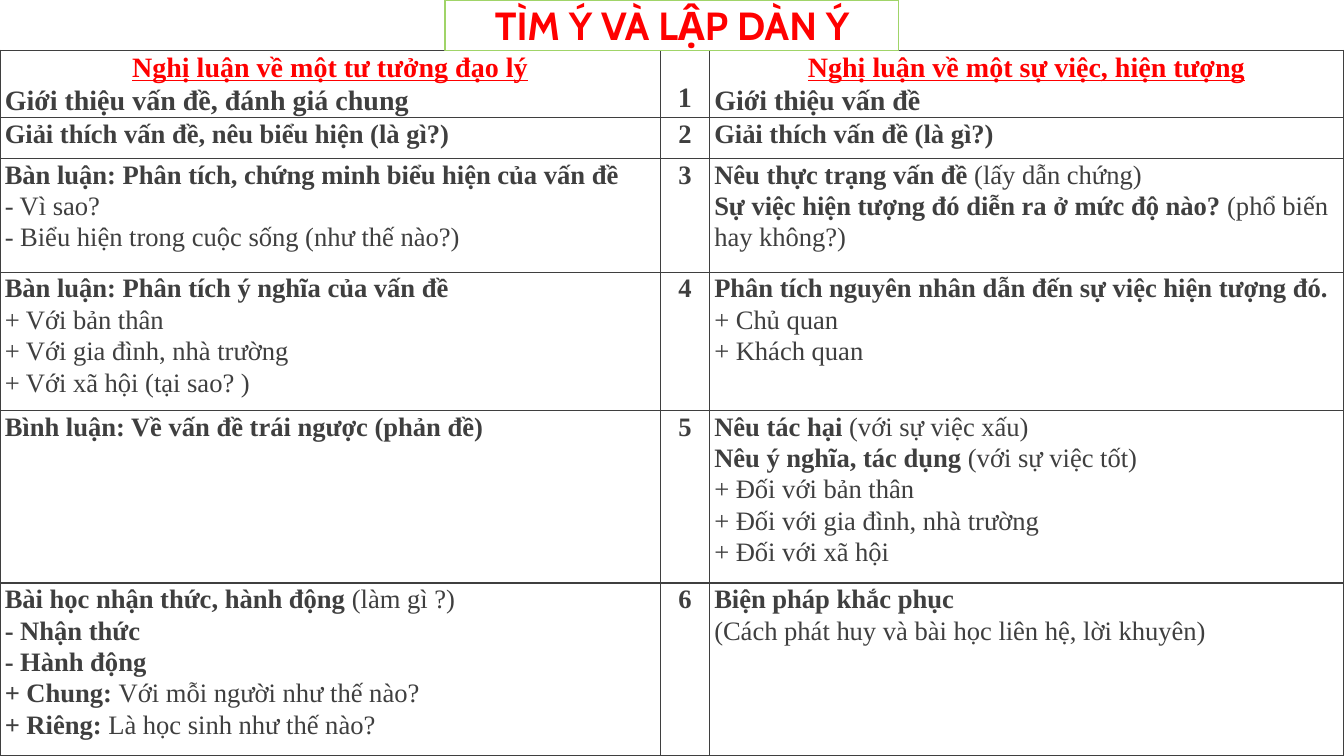
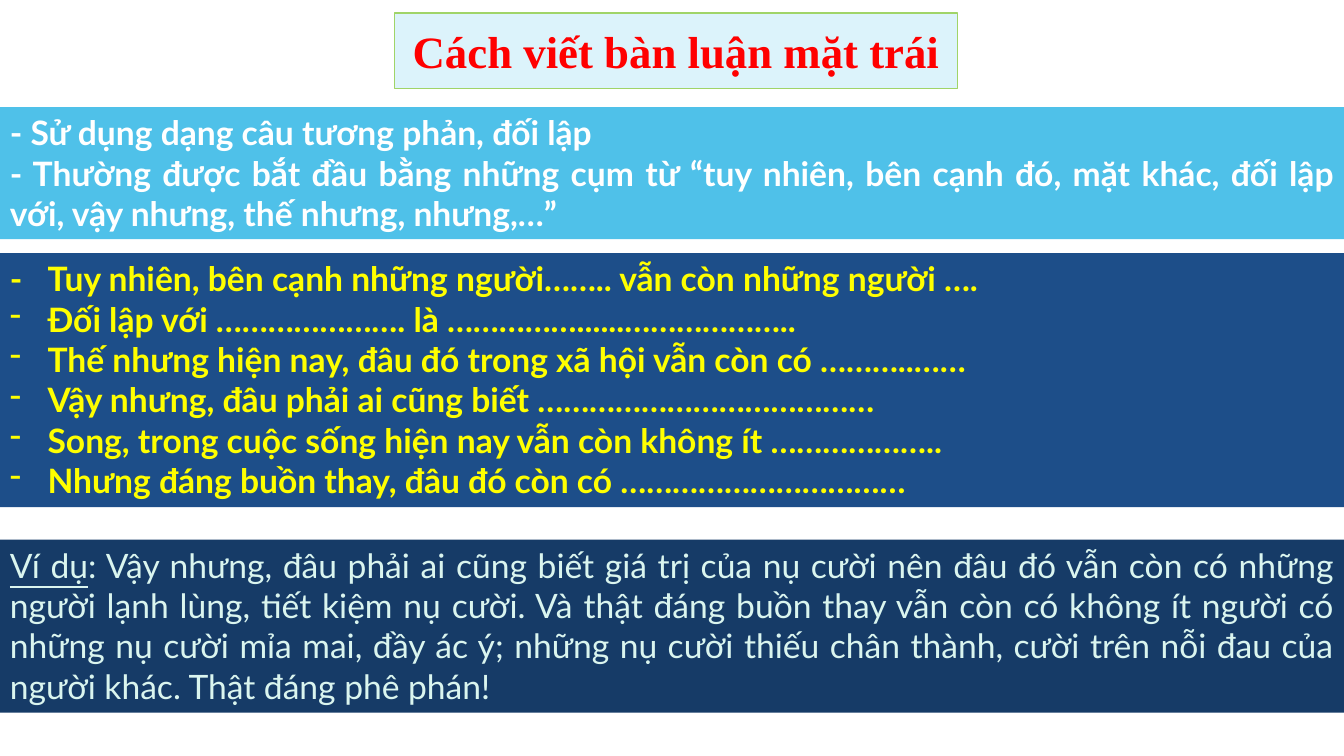
from lxml import etree
from pptx import Presentation
from pptx.dml.color import RGBColor
from pptx.enum import shapes, text
from pptx.oxml.ns import qn
from pptx.util import Cm, Pt

COLORS = {
    "white": "FFFFFF", "red": "FF0000", "ink": "3F3F3F", "green": "A0D468",
    "pale": "DCF3FB", "sky": "4FC1E9", "blue": "1D4E89", "navy": "163B67",
    "yellow": "FFFF00", "mint": "DAF5EF",
}
SERIF, TITLE_FONT, BODY_FONT = "Times New Roman", "Cabin", "Lato"
WIDTH, HEIGHT = 33.87, 19.05
CENTER, LEFT, JUSTIFY = (text.PP_ALIGN.CENTER, text.PP_ALIGN.LEFT,
                         text.PP_ALIGN.JUSTIFY)

# Outline table: *bold* marks strong words, a leading # marks a heading
OUTLINE = [
    (["#Nghị luận về một tư tưởng đạo lý",
      "*Giới thiệu vấn đề, đánh giá chung*"],
     ["#Nghị luận về một sự việc, hiện tượng",
      "*Giới thiệu vấn đề*"]),
    (["*Giải thích vấn đề, nêu biểu hiện (là gì?)*"],
     ["*Giải thích vấn đề (là gì?)*"]),
    (["*Bàn luận: Phân tích, chứng minh biểu hiện của vấn đề*",
      "- Vì sao?",
      "- Biểu hiện trong cuộc sống (như thế nào?)"],
     ["*Nêu thực trạng vấn đề *(lấy dẫn chứng)",
      "*Sự việc hiện tượng đó diễn ra ở mức độ nào? *(phổ biến hay không?)"]),
    (["*Bàn luận: Phân tích ý nghĩa của vấn đề*",
      "+ Với bản thân",
      "+ Với gia đình, nhà trường",
      "+ Với xã hội (tại sao? )"],
     ["*Phân tích nguyên nhân dẫn đến sự việc hiện tượng đó.*",
      "+ Chủ quan",
      "+ Khách quan"]),
    (["*Bình luận: Về vấn đề trái ngược (phản đề)*"],
     ["*Nêu tác hại *(với sự việc xấu)",
      "*Nêu ý nghĩa, tác dụng *(với sự việc tốt)",
      "+ Đối với bản thân",
      "+ Đối với gia đình, nhà trường",
      "+ Đối với xã hội"]),
    (["*Bài học nhận thức, hành động *(làm gì ?)",
      "*- Nhận thức*",
      "*- Hành động*",
      "*+ Chung: *Với mỗi người như thế nào?",
      "*+ Riêng: *Là học sinh như thế nào?"],
     ["*Biện pháp khắc phục*",
      "(Cách phát huy và bài học liên hệ, lời khuyên)"]),
]
COLUMN_WIDTHS = [16.64, 1.24, 15.98]
ROW_HEIGHTS = [1.7, 1.02, 2.87, 3.48, 4.35, 4.35]

USAGE = [
    "- Sử dụng dạng câu tương phản, đối lập",
    "- Thường được bắt đầu bằng những cụm từ “tuy nhiên, bên cạnh đó, mặt khác, "
    "đối lập với, vậy nhưng, thế nhưng, nhưng,…”",
]
FIRST_PATTERN = "-\tTuy nhiên, bên cạnh những người…….. vẫn còn những người …."
PATTERNS = [
    "Đối lập với …………………. là ……………......………………..",
    "Thế nhưng hiện nay, đâu đó trong xã hội vẫn còn có ………..……",
    "Vậy nhưng, đâu phải ai cũng biết …………………………………",
    "Song, trong cuộc sống hiện nay vẫn còn không ít ………………..",
    "Nhưng đáng buồn thay, đâu đó còn có ……………………………",
]
EXAMPLE = (
    ": Vậy nhưng, đâu phải ai cũng biết giá trị của nụ cười nên đâu đó vẫn còn có "
    "những người lạnh lùng, tiết kiệm nụ cười. Và thật đáng buồn thay vẫn còn có "
    "không ít người có những nụ cười mỉa mai, đầy ác ý; những nụ cười thiếu chân "
    "thành, cười trên nỗi đau của người khác. Thật đáng phê phán!")


def color(name):
    return RGBColor.from_string(COLORS[name])


def apply(target, values):
    for name, value in values.items():
        setattr(target, name, value)


class Deck:
    def __init__(self):
        self.presentation = Presentation()
        apply(self.presentation,
              {"slide_width": Cm(WIDTH), "slide_height": Cm(HEIGHT)})
        self.slide = None

    def new_slide(self):
        layout = self.presentation.slide_layouts[6]
        self.slide = self.presentation.slides.add_slide(layout)

    def run(self, paragraph, words, ink, **font):
        run = paragraph.add_run()
        run.text = words
        apply(run.font, font)
        run.font.color.rgb = color(ink)

    def paragraphs(self, frame, count, **values):
        """Yield the given number of formatted paragraphs."""
        for index in range(count):
            paragraph = frame.add_paragraph() if index else frame.paragraphs[0]
            apply(paragraph, values)
            yield paragraph

    def box(self, left, top, width, height, fill, line=None):
        shape = self.slide.shapes.add_shape(
            shapes.MSO_SHAPE.RECTANGLE, Cm(left), Cm(top), Cm(width), Cm(height))
        shape.shadow.inherit = False
        shape.fill.solid()
        shape.fill.fore_color.rgb = color(fill)
        if line:
            shape.line.color.rgb = color(line)
            shape.line.width = Pt(1)
        else:
            shape.line.fill.background()
        apply(shape.text_frame, {"word_wrap": True,
                                 "vertical_anchor": text.MSO_ANCHOR.TOP})
        return shape.text_frame

    def title(self, words, left, top, width, height, fill, font, size):
        frame = self.box(left, top, width, height, fill, "green")
        frame.vertical_anchor = text.MSO_ANCHOR.MIDDLE
        for paragraph in self.paragraphs(frame, 1, alignment=CENTER):
            self.run(paragraph, words, "red", name=font, size=Pt(size), bold=True)

    def band(self, top, height, fill, ink, lines, bold=True):
        """Full-width band; each line is a list of (words, underlined)."""
        frame = self.box(0, top, WIDTH, height, fill)
        frame.auto_size = text.MSO_AUTO_SIZE.SHAPE_TO_FIT_TEXT
        rows = list(self.paragraphs(frame, len(lines), alignment=JUSTIFY))
        for paragraph, line in zip(rows, lines):
            for words, underlined in line:
                self.run(paragraph, words, ink, name=BODY_FONT, size=Pt(24),
                         bold=bold, underline=underlined)
        return rows

    def hang(self, paragraph, bullet=None):
        properties = paragraph._p.get_or_add_pPr()
        properties.set("marL", str(Cm(0.95)))
        properties.set("indent", str(-Cm(0.95)))
        if bullet:
            etree.SubElement(properties, qn("a:buFontTx"))
            etree.SubElement(properties, qn("a:buChar"), char=bullet)

    def cell(self, cell, lines, size, alignment=LEFT, margin_top=0):
        # Borders come before the fill in the cell properties
        properties = cell._tc.get_or_add_tcPr()
        for side in ("lnL", "lnR", "lnT", "lnB"):
            border = etree.SubElement(properties, qn(f"a:{side}"), w=str(Pt(1)))
            solid = etree.SubElement(border, qn("a:solidFill"))
            etree.SubElement(solid, qn("a:srgbClr"), val=COLORS["ink"])
        cell.fill.solid()
        cell.fill.fore_color.rgb = color("white")
        apply(cell, {"margin_left": Cm(0.12), "margin_right": Cm(0.12),
                     "margin_top": Cm(margin_top), "margin_bottom": 0})
        rows = self.paragraphs(cell.text_frame, len(lines),
                               alignment=alignment, line_spacing=1.07)
        font = {"name": SERIF, "size": Pt(size)}
        for paragraph, line in zip(rows, lines):
            if line.startswith("#"):
                paragraph.alignment = CENTER
                self.run(paragraph, line[1:], "red", bold=True, underline=True,
                         **font)
                continue
            for index, words in enumerate(line.split("*")):
                if words:
                    self.run(paragraph, words, "ink", bold=index % 2 == 1, **font)

    def outline_table(self, top):
        table = self.slide.shapes.add_table(
            len(OUTLINE), len(COLUMN_WIDTHS), 0, Cm(top),
            Cm(sum(COLUMN_WIDTHS)), Cm(sum(ROW_HEIGHTS))).table
        apply(table, {"first_row": False, "horz_banding": False})
        for column, width in zip(table.columns, COLUMN_WIDTHS):
            column.width = Cm(width)
        for index, (left, right) in enumerate(OUTLINE):
            table.rows[index].height = Cm(ROW_HEIGHTS[index])
            size = 19 if index else 20
            self.cell(table.cell(index, 0), left, size)
            # The first number sits beside the line below the heading
            self.cell(table.cell(index, 1), [f"*{index + 1}*"], size, CENTER,
                      0 if index else 0.75)
            self.cell(table.cell(index, 2), right, size)


def main():
    deck = Deck()

    # Slide 1: outline of both essay types
    deck.new_slide()
    deck.outline_table(1.27)
    deck.title("TÌM Ý VÀ LẬP DÀN Ý", 11.22, 0, 11.43, 1.27, "white",
               TITLE_FONT, 28)

    # Slide 2: writing about the opposite side
    deck.new_slide()
    deck.title("Cách viết bàn luận mặt trái", 9.95, 0.33, 14.18, 1.9, "pale",
               SERIF, 32)
    deck.band(2.7, 3.33, "sky", "white", [[(line, False)] for line in USAGE])
    first, *others = deck.band(
        6.38, 6.4, "blue", "yellow",
        [[(line, False)] for line in [FIRST_PATTERN, *PATTERNS]])
    deck.hang(first)
    for paragraph in others:
        deck.hang(paragraph, "-")
    deck.band(13.6, 4.36, "navy", "mint",
              [[("Ví dụ", True), (EXAMPLE, False)]], bold=False)

    deck.presentation.save("out.pptx")


if __name__ == "__main__":
    main()
